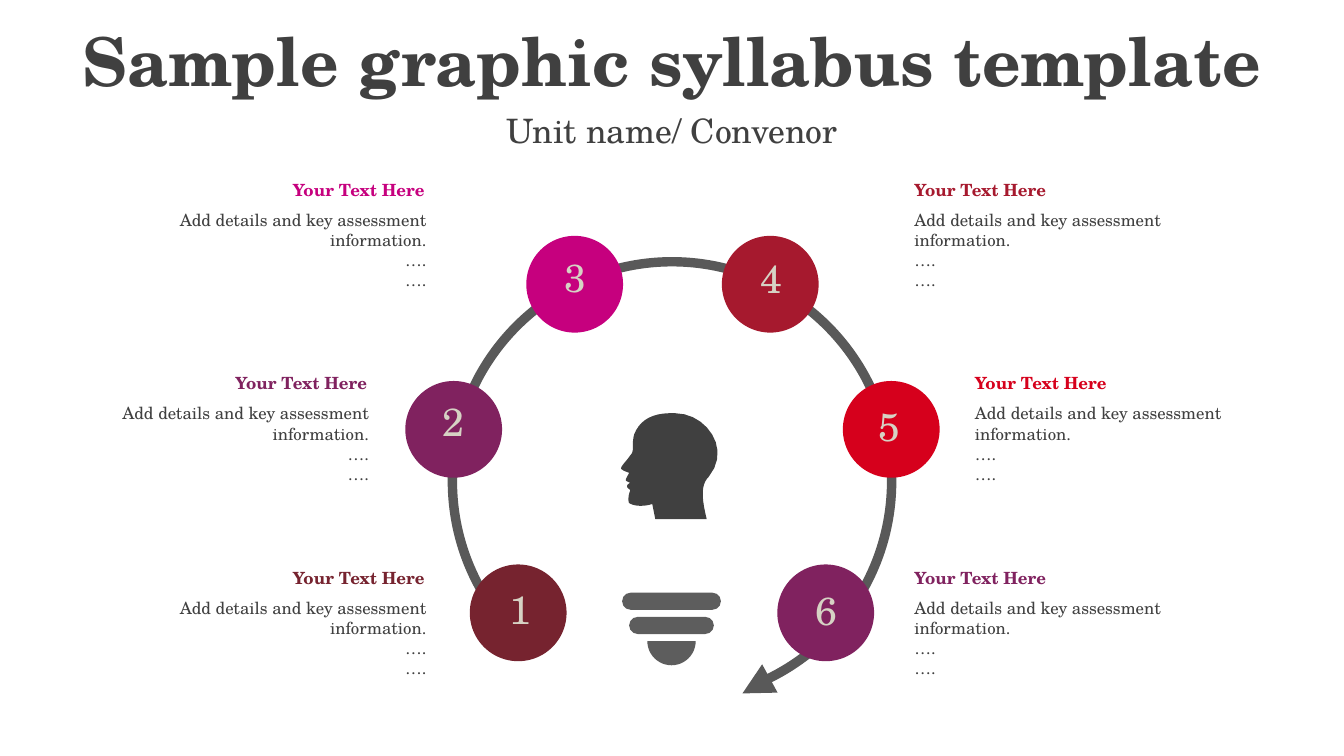
from dataclasses import dataclass

from lxml import etree
from pptx import Presentation
from pptx.dml.color import RGBColor
from pptx.enum import shapes, text
from pptx.oxml import ns
from pptx.util import Inches, Pt


@dataclass(frozen=True)
class Theme:
    font: str = "TeX Gyre Schola"
    ink: str = "404040"
    ring: str = "595959"
    bulb: str = "191919"
    number: str = "D6D2C4"
    plum: str = "80225F"
    maroon: str = "76232F"
    magenta: str = "C6007E"
    crimson: str = "A6192E"
    red: str = "D6001C"
    title_size: int = 48
    subtitle_size: int = 24
    number_size: int = 28
    body_size: int = 12


THEME = Theme()
SHAPE = shapes.MSO_SHAPE
ALIGN = text.PP_ALIGN
DISC_SIZE = 0.96
DETAILS = ["Add details and key assessment information.", "….", "…."]

# Colour, disc left and top, number left and top, text left and top, alignment
TOPICS = [
    (THEME.maroon, (4.66, 5.6), (4.95, 5.76), (1.43, 5.58), ALIGN.RIGHT),
    (THEME.plum, (4.02, 3.78), (4.29, 3.89), (0.86, 3.65), ALIGN.RIGHT),
    (THEME.magenta, (5.22, 2.34), (5.5, 2.46), (1.43, 1.73), ALIGN.RIGHT),
    (THEME.crimson, (7.16, 2.34), (7.44, 2.47), (8.97, 1.73), ALIGN.LEFT),
    (THEME.red, (8.36, 3.78), (8.61, 3.94), (9.57, 3.65), ALIGN.LEFT),
    (THEME.plum, (7.71, 5.6), (7.99, 5.77), (8.97, 5.58), ALIGN.LEFT),
]

# Head outline: each step is a line (one point) or a cubic curve (three points)
HEAD_START = (6.7, 4.1)
HEAD_STEPS = [
    [(6.48, 4.09), (6.35, 4.16), (6.29, 4.31)],
    [(6.26, 4.43), (6.3, 4.47), (6.25, 4.52)],
    [(6.21, 4.58), (6.16, 4.62), (6.16, 4.65)],
    [(6.18, 4.67), (6.21, 4.68), (6.24, 4.69)],
    [(6.23, 4.72), (6.2, 4.75), (6.21, 4.77)],
    [(6.25, 4.79)],
    [(6.24, 4.8), (6.22, 4.8), (6.22, 4.83)],
    [(6.23, 4.85), (6.26, 4.86), (6.25, 4.87)],
    [(6.23, 4.92), (6.23, 4.97), (6.24, 4.99)],
    [(6.28, 5.02), (6.38, 5.03), (6.47, 5)],
    [(6.5, 5.15)],
    [(7.01, 5.15)],
    [(6.95, 4.91), (6.96, 4.8), (7.03, 4.73)],
    [(7.26, 4.45), (7, 4.1), (6.7, 4.1)],
]


def paint(shape, color, opacity=None):
    shape.shadow.inherit = False
    shape.fill.solid()
    shape.fill.fore_color.rgb = RGBColor.from_string(color)
    shape.line.fill.background()
    if opacity is not None:
        tint = shape.fill._xPr.find(".//" + ns.qn("a:srgbClr"))
        etree.SubElement(tint, ns.qn("a:alpha"), val=str(opacity * 1000))


def add_block(slide, kind, box, color, opacity=None, adjustments=(), rotation=0):
    shape = slide.shapes.add_shape(kind, *map(Inches, box))
    for index, value in enumerate(adjustments):
        shape.adjustments[index] = value
    shape.rotation = rotation
    paint(shape, color, opacity)


def angle(degrees):
    """Turn degrees into the unit of shape adjustments."""
    return degrees * 0.6


def add_text(slide, box, lines, *, size, color=THEME.ink, bold=False, align=ALIGN.LEFT,
             anchor=text.MSO_ANCHOR.TOP, wrap=True, line_spacing=None):
    frame = slide.shapes.add_textbox(*map(Inches, box)).text_frame
    frame.word_wrap = wrap
    frame.vertical_anchor = anchor
    for index, line in enumerate(lines):
        paragraph = frame.add_paragraph() if index else frame.paragraphs[0]
        paragraph.alignment = align
        paragraph.line_spacing = line_spacing
        run = paragraph.add_run()
        run.text = line
        run.font.name = THEME.font
        run.font.size = Pt(size)
        run.font.bold = bold
        run.font.color.rgb = RGBColor.from_string(color)


def curve_points(start, first, second, end, count=10):
    for step in range(1, count + 1):
        t = step / count
        weights = ((1 - t) ** 3, 3 * t * (1 - t) ** 2, 3 * t * t * (1 - t), t ** 3)
        corners = (start, first, second, end)
        yield tuple(sum(w * c[axis] for w, c in zip(weights, corners)) for axis in (0, 1))


def add_head(slide):
    points, current = [], HEAD_START
    for step in HEAD_STEPS:
        points += curve_points(current, *step) if len(step) == 3 else step
        current = step[-1]
    builder = slide.shapes.build_freeform(*map(Inches, HEAD_START))
    builder.add_line_segments([(Inches(x), Inches(y)) for x, y in points], close=True)
    paint(builder.convert_to_shape(), THEME.ink)


def add_ring(slide):
    add_block(slide, SHAPE.BLOCK_ARC, (4.44, 2.55, 4.45, 4.45), THEME.ring,
              adjustments=(angle(140), angle(65), 0.021))
    add_block(slide, SHAPE.ISOSCELES_TRIANGLE, (7.34, 6.65, 0.32, 0.31), THEME.ring,
              rotation=241.4)


def add_bulb_base(slide):
    for box in ((6.17, 5.88, 0.98, 0.17), (6.24, 6.12, 0.84, 0.17)):
        add_block(slide, SHAPE.ROUNDED_RECTANGLE, box, THEME.bulb, 70, (0.5,))
    add_block(slide, SHAPE.CHORD, (6.42, 6.12, 0.48, 0.48), THEME.bulb, 70,
              (angle(0), angle(180)))


def add_topic(slide, number, color, disc, number_at, text_at, align):
    left, top = text_at
    add_block(slide, SHAPE.OVAL, (*disc, DISC_SIZE, DISC_SIZE), color)
    add_text(slide, (*number_at, 0.39, 0.57), [str(number)], size=THEME.number_size,
             color=THEME.number, align=ALIGN.CENTER, wrap=False)
    add_text(slide, (left, top, 2.88, 0.3), ["Your Text Here"], size=THEME.body_size,
             color=color, bold=True, align=align)
    add_text(slide, (left, top + 0.3, 2.9, 0.91), DETAILS, size=THEME.body_size, align=align)


def main():
    presentation = Presentation()
    presentation.slide_width = Inches(13.33)
    presentation.slide_height = Inches(7.5)
    slide = presentation.slides.add_slide(presentation.slide_layouts[6])

    # Headings
    add_text(slide, (0, 0.22, 13.33, 0.85), ["Sample graphic syllabus template"],
             size=THEME.title_size, bold=True, align=ALIGN.CENTER,
             anchor=text.MSO_ANCHOR.MIDDLE, line_spacing=0.9)
    add_text(slide, (0, 1.1, 13.33, 0.46), ["Unit name/ Convenor"],
             size=THEME.subtitle_size, align=ALIGN.CENTER,
             anchor=text.MSO_ANCHOR.MIDDLE, line_spacing=0.8)

    # Light bulb with the six topics around it
    add_ring(slide)
    for number, topic in enumerate(TOPICS, start=1):
        add_topic(slide, number, *topic)
    add_head(slide)
    add_bulb_base(slide)

    presentation.save("out.pptx")


if __name__ == "__main__":
    main()
